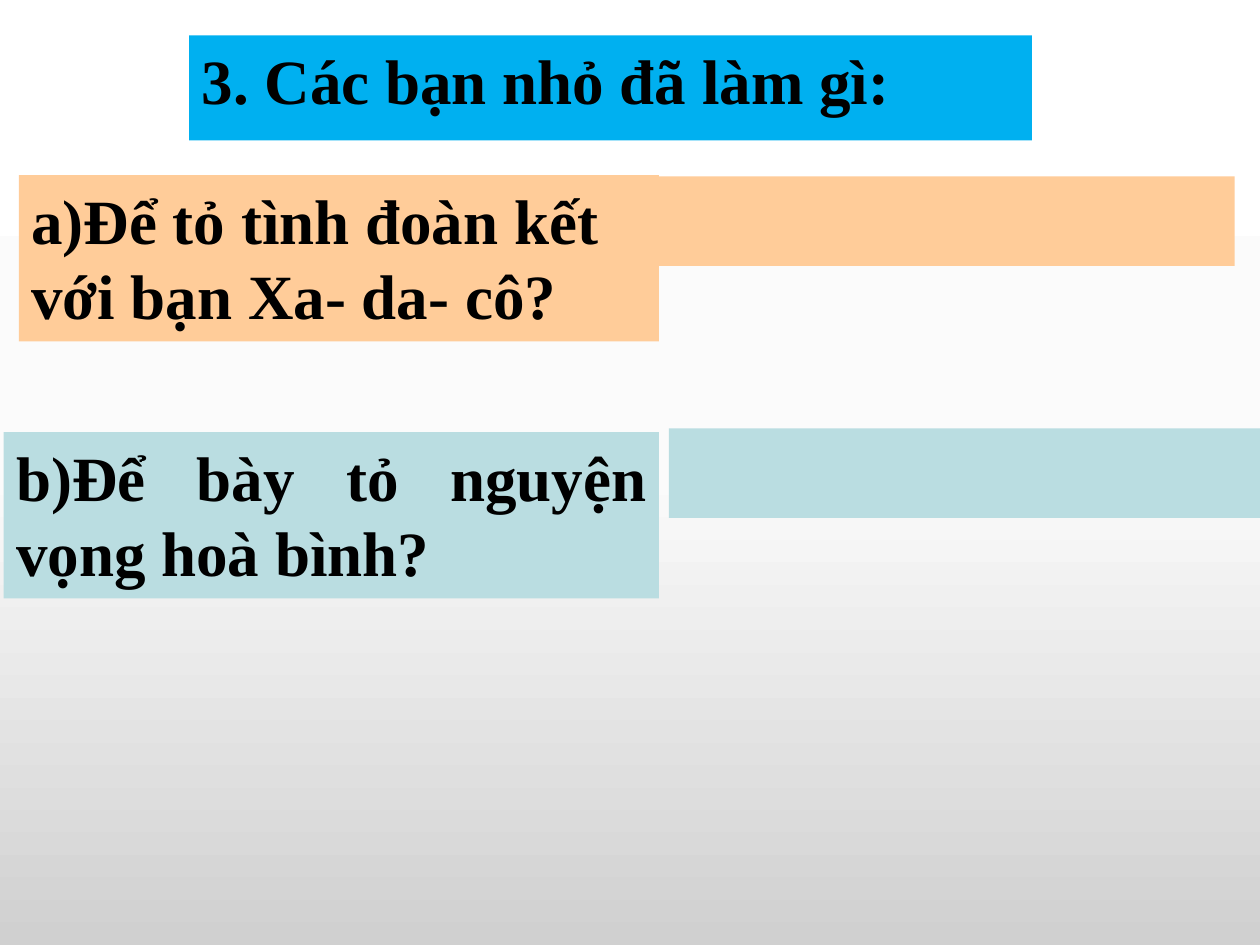
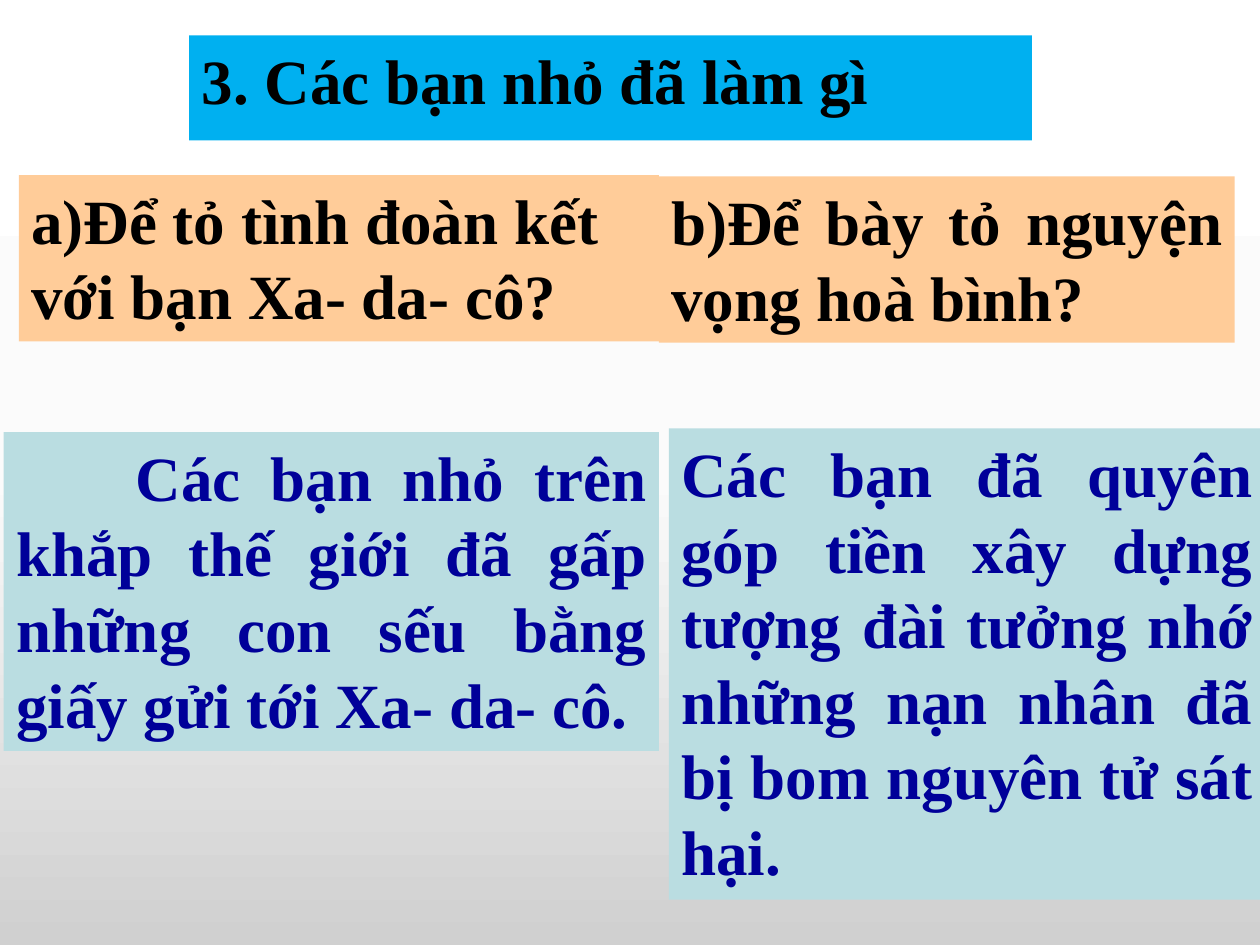
from lxml import etree
from pptx import Presentation
from pptx import util as u
from pptx.dml.color import RGBColor
from pptx.enum import shapes, text
from pptx.oxml.ns import qn

FONT = "Times New Roman"
BLACK, NAVY = "000000", "000099"
SKY, PEACH, AQUA = "00B0F0", "FFCC99", "BADDE1"
BACKGROUND_STOPS = [(0, "FFFFFF"), (50, "FBFBFB"), (100, "D0D0D0")]
TITLE_ONLY = 5

TITLE_BOX = (1.5, 0.28, 6.69, 0.71)
# left, top, width of the four panels
TOP_LEFT = (0.15, 1.39, 5.08)
TOP_RIGHT = (5.23, 1.4, 4.57)
BOTTOM_LEFT = (0.03, 3.43, 5.2)
BOTTOM_RIGHT = (5.31, 3.4, 4.73)

LEFT = text.PP_ALIGN.LEFT
JUSTIFIED = text.PP_ALIGN.JUSTIFY

QUESTION_A = "a)Để tỏ tình đoàn kết với bạn Xa- da- cô?"
QUESTION_B = "b)Để bày tỏ nguyện vọng hoà bình?"
ANSWER_A = ("Các bạn nhỏ trên khắp thế giới đã gấp những con sếu bằng giấy "
            "gửi tới Xa- da- cô.")
ANSWER_B = ("Các bạn đã quyên góp tiền xây dựng tượng đài tưởng nhớ những "
            "nạn nhân đã bị bom nguyên tử sát hại.")


def rgb(hex_color):
    return RGBColor.from_string(hex_color)


def panel_height(lines):
    """Height in inches of a panel that holds this many lines of 36 pt text."""
    return round(0.11 + 0.605 * lines, 2)


def set_background(master):
    fill = master.background.fill
    fill.gradient()
    fill.gradient_angle = 270
    stop_list = master.element.find(".//" + qn("a:gsLst"))
    for stop in list(stop_list):
        stop_list.remove(stop)
    for percent, color in BACKGROUND_STOPS:
        stop = etree.SubElement(stop_list, qn("a:gs"), pos=str(percent * 1000))
        etree.SubElement(stop, qn("a:srgbClr"), val=color)


def fill_shape(shape, color):
    shape.fill.solid()
    shape.fill.fore_color.rgb = rgb(color)
    shape.line.fill.background()


def write(shape, words, color=BLACK, alignment=LEFT, indent=0):
    frame = shape.text_frame
    frame.word_wrap = True
    frame.auto_size = text.MSO_AUTO_SIZE.SHAPE_TO_FIT_TEXT
    frame.vertical_anchor = text.MSO_ANCHOR.TOP
    paragraph = frame.paragraphs[0]
    paragraph.alignment = alignment
    if indent:
        properties = paragraph._p.get_or_add_pPr()
        properties.set("indent", str(u.Inches(indent)))
    run = paragraph.add_run()
    run.text = words
    run.font.name = FONT
    run.font.size = u.Pt(36)
    run.font.bold = True
    run.font.color.rgb = rgb(color)


def add_title(slide, words):
    title = slide.shapes.title
    title.left, title.top, title.width, title.height = map(u.Inches, TITLE_BOX)
    fill_shape(title, SKY)
    write(title, words)


def add_panel(slide, place, lines, fill, words="", **style):
    left, top, width = place
    panel = slide.shapes.add_shape(
        shapes.MSO_SHAPE.RECTANGLE, u.Inches(left), u.Inches(top),
        u.Inches(width), u.Inches(panel_height(lines)))
    panel.shadow.inherit = False
    fill_shape(panel, fill)
    if words:
        write(panel, words, **style)


def add_question_slide(presentation, title):
    """Add a slide with the title and question a, which every slide shows."""
    slide = presentation.slides.add_slide(presentation.slide_layouts[TITLE_ONLY])
    add_title(slide, title)
    add_panel(slide, TOP_LEFT, 2, PEACH, QUESTION_A)
    return slide


def main():
    presentation = Presentation()
    presentation.slide_width = u.Inches(10)
    presentation.slide_height = u.Inches(7.5)
    set_background(presentation.slide_master)

    questions = add_question_slide(presentation, "3. Các bạn nhỏ đã làm gì:")
    add_panel(questions, BOTTOM_LEFT, 2, AQUA, QUESTION_B, alignment=JUSTIFIED)
    add_panel(questions, TOP_RIGHT, 1, PEACH)
    add_panel(questions, BOTTOM_RIGHT, 1, AQUA)

    answers = add_question_slide(presentation, "3. Các bạn nhỏ đã làm gì")
    add_panel(answers, BOTTOM_LEFT, 4, AQUA, ANSWER_A,
              color=NAVY, alignment=JUSTIFIED, indent=0.95)
    add_panel(answers, TOP_RIGHT, 2, PEACH, QUESTION_B, alignment=JUSTIFIED)
    add_panel(answers, BOTTOM_RIGHT, 6, AQUA, ANSWER_B,
              color=NAVY, alignment=JUSTIFIED)

    presentation.save("out.pptx")


if __name__ == "__main__":
    main()
